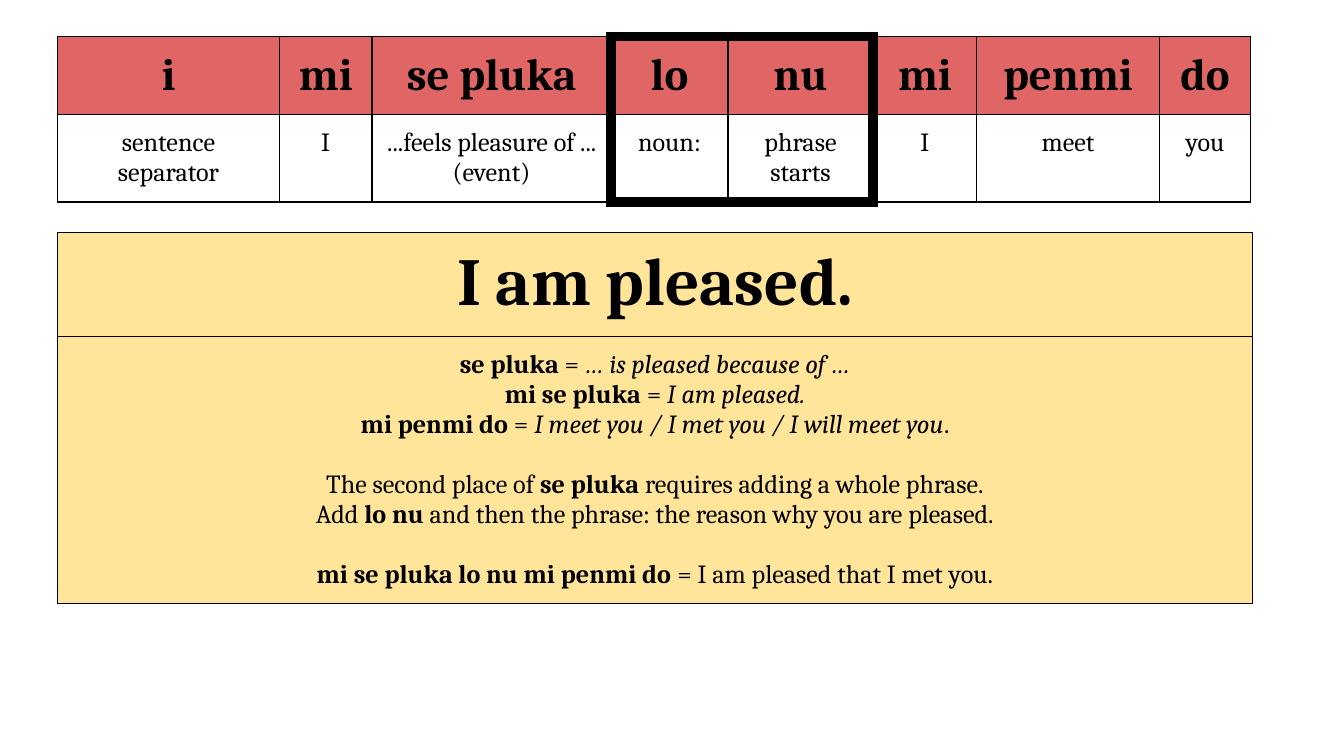
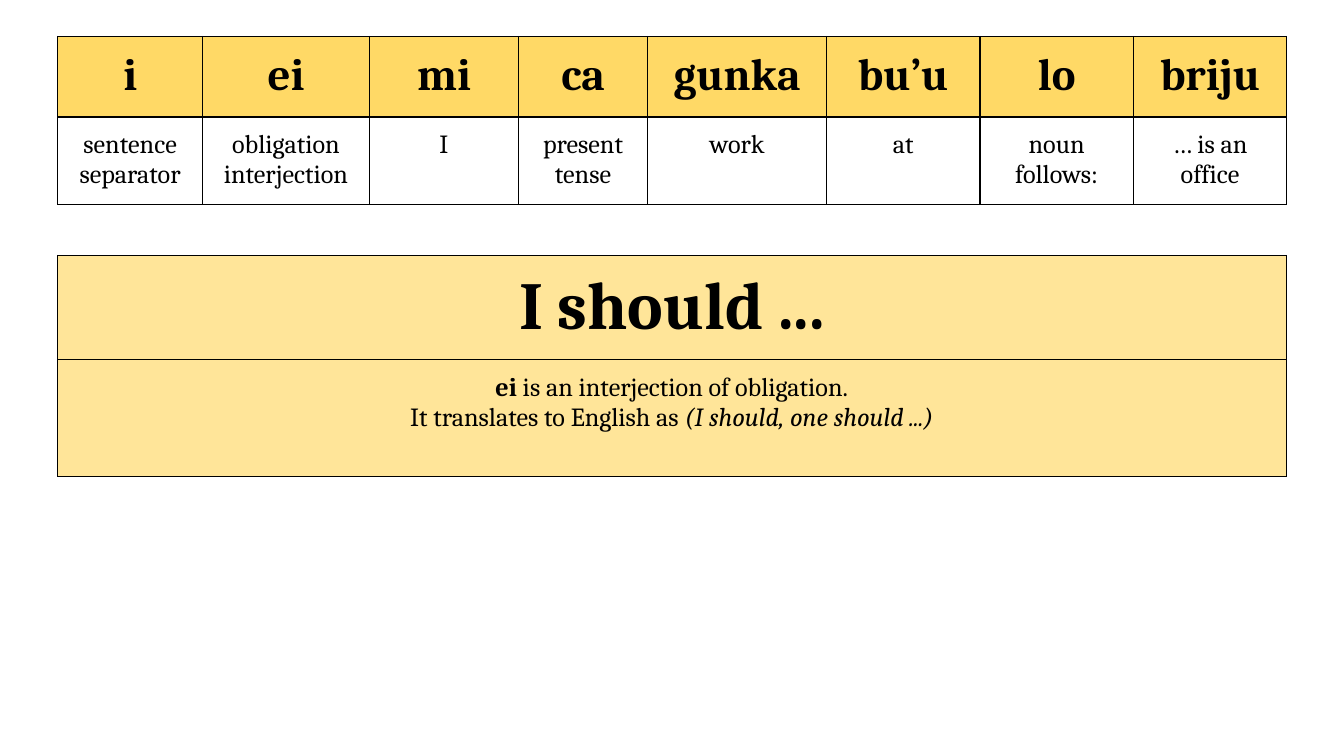
"""Build two Lojban phrase slides, each with a word-by-word gloss and an explanation."""
from lxml.etree import SubElement
from pptx import Presentation
from pptx.dml.color import RGBColor
from pptx.enum.text import PP_ALIGN as Align
from pptx.oxml.ns import qn
from pptx.util import Cm, Pt

FONT = "Cambria"
INK, SAND = "000000", "FFE599"
THIN, THICK = 0.75, 6
LEFT, GLOSS_TOP, MARGIN = Cm(1.09), Cm(0.69), Cm(0.25)
SPAN = 6
WORD_SIZE, HEADLINE_SIZE, BODY_SIZE = 24, 36, 14
SECTION_GAP = Pt(16)


def add_grid(slide, top, widths, heights):
    """Add an unbanded table with the given column widths and row heights in cm."""
    grid = slide.shapes.add_table(len(heights), len(widths), LEFT, top,
                                  Cm(sum(widths)), Cm(sum(heights))).table
    grid.first_row = grid.horz_banding = False
    for column, width in zip(grid.columns, widths):
        column.width = Cm(width)
    for row, height in zip(grid.rows, heights):
        row.height = Cm(height)
    return grid


def fill_cell(cell, paragraphs, size, color=None, thick=""):
    """Write runs into a cell, then draw its borders and fill."""
    cell.margin_left = cell.margin_right = cell.margin_top = cell.margin_bottom = MARGIN
    for index, (starts_section, runs) in enumerate(paragraphs):
        frame = cell.text_frame
        paragraph = frame.add_paragraph() if index else frame.paragraphs[0]
        paragraph.alignment = Align.CENTER
        if starts_section:
            paragraph.space_before = SECTION_GAP
        for words, style in runs:
            run = paragraph.add_run()
            run.text = words
            run.font.name = FONT
            run.font.size = Pt(size)
            run.font.bold = style == "b"
            run.font.italic = style == "i"
            run.font.color.rgb = RGBColor.from_string(INK)
    properties = cell._tc.get_or_add_tcPr()
    for side in "LRTB":
        weight = THICK if side in thick else THIN
        border = SubElement(properties, qn(f"a:ln{side}"), w=str(Pt(weight)))
        paint = SubElement(border, qn("a:solidFill"))
        SubElement(paint, qn("a:srgbClr"), val=INK)
    if color:
        cell.fill.solid()
        cell.fill.fore_color.rgb = RGBColor.from_string(color)
    else:
        cell.fill.background()


lessons = [
    {
        "headline": "I am pleased.",
        "top": 4.39,
        "spans": [3.87] * 5 + [3.23],
        "heights": [1.97, 5.04],
        "explanation": [
            (False, [("se pluka", "b"), (" = ", ""), ("… is pleased because of …", "i")]),
            (False, [("mi se pluka", "b"), (" = ", ""), ("I am pleased.", "i")]),
            (False, [("mi penmi do", "b"), (" = ", ""),
                     ("I meet you / I met you / I will meet you", "i"), (".", "")]),
            (True, [("The second place of ", ""), ("se pluka ", "b"),
                    ("requires adding a whole phrase.", "")]),
            (False, [("Add ", ""), ("lo nu", "b"),
                     (" and then the phrase: the reason why you are pleased.", "")]),
            (True, [("mi se pluka lo nu mi penmi do", "b"),
                    (" = I am pleased that I met you.", "")]),
        ],
        "word_color": "E06666",
        "gloss_heights": [1.48, 1.65],
        "gloss": [
            ("i", "sentence separator", 4.19),
            ("mi", "I", 1.75),
            ("se pluka", "...feels pleasure of ... (event)", 4.52),
            ("lo", "noun:", 2.21),
            ("nu", "phrase starts", 2.74),
            ("mi", "I", 1.96),
            ("penmi", "meet", 3.45),
            ("do", "you", 1.73),
        ],
        "frame": {2: ("R", "R"), 3: ("LT", "LB"), 4: ("RT", "RB"), 5: ("L", "L")},
    },
    {
        "headline": "I should ...",
        "top": 4.83,
        "spans": [3.87] * SPAN,
        "heights": [1.97, 2.21],
        "explanation": [
            (False, [("ei", "b"), (" is an interjection of obligation.", "")]),
            (False, [("It translates to English as ", ""),
                     ("(I should, one should ...)", "i")]),
        ],
        "word_color": "FFD966",
        "gloss_heights": [1.52, 1.65],
        "gloss": [
            ("i", "sentence separator", 2.74),
            ("ei", "obligation interjection", 3.15),
            ("mi", "I", 2.82),
            ("ca", "present tense", 2.44),
            ("gunka", "work", 3.38),
            ("bu’u", "at", 2.9),
            ("lo", "noun follows:", 2.9),
            ("briju", "… is an office", 2.9),
        ],
        "frame": {},
    },
]

deck = Presentation()
deck.slide_width, deck.slide_height = Cm(25.4), Cm(14.29)

for lesson in lessons:
    slide = deck.slides.add_slide(deck.slide_layouts[6])

    explanation = add_grid(slide, Cm(lesson["top"]), lesson["spans"], lesson["heights"])
    headline = [(False, [(lesson["headline"], "b")])]
    sections = [(headline, HEADLINE_SIZE), (lesson["explanation"], BODY_SIZE)]
    for row, (paragraphs, size) in enumerate(sections):
        explanation.cell(row, 0).merge(explanation.cell(row, SPAN - 1))
        fill_cell(explanation.cell(row, 0), paragraphs, size, SAND)
        for column in range(1, SPAN):
            fill_cell(explanation.cell(row, column), [], size, SAND)

    widths = [width for _, _, width in lesson["gloss"]]
    gloss = add_grid(slide, GLOSS_TOP, widths, lesson["gloss_heights"])
    for column, (word, meaning, _) in enumerate(lesson["gloss"]):
        word_edges, meaning_edges = lesson["frame"].get(column, ("", ""))
        fill_cell(gloss.cell(0, column), [(False, [(word, "b")])], WORD_SIZE,
                  lesson["word_color"], word_edges)
        fill_cell(gloss.cell(1, column), [(False, [(meaning, "")])], BODY_SIZE,
                  thick=meaning_edges)

deck.save("out.pptx")
